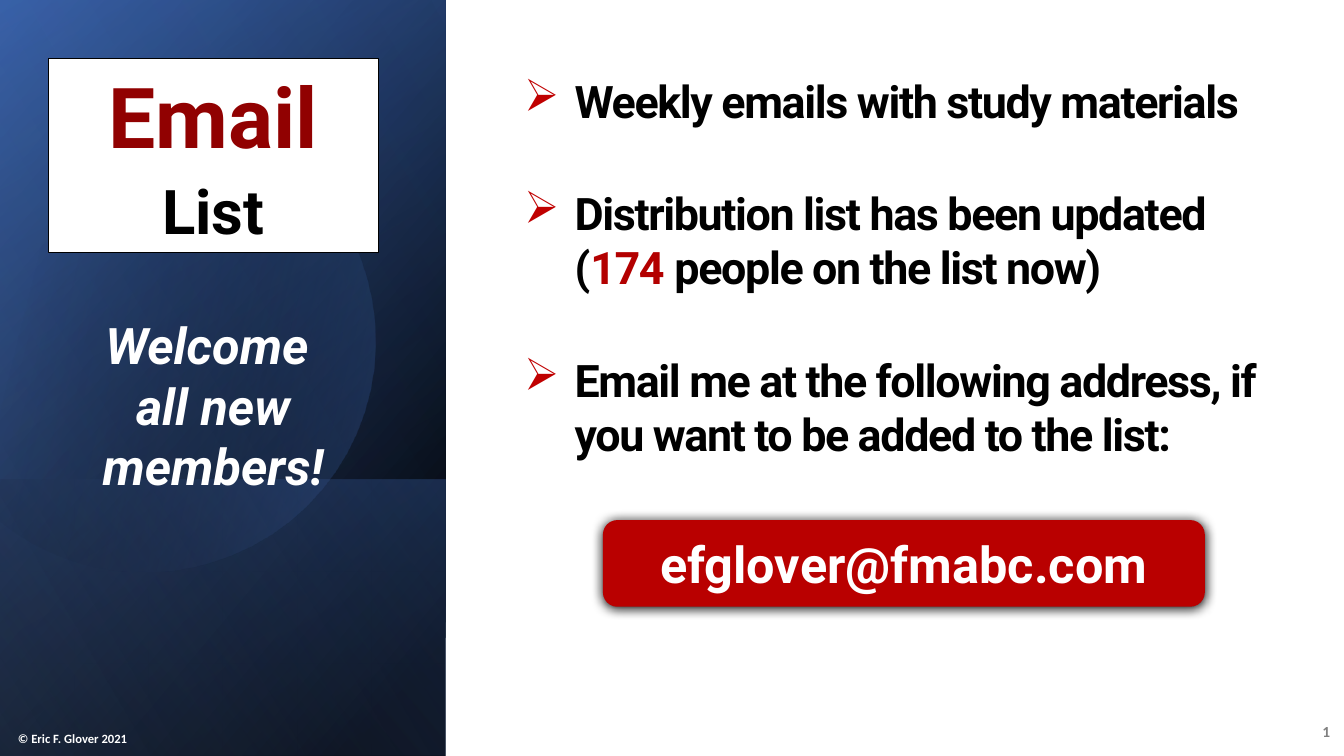
import math

import lxml.etree
import pptx
import pptx.dml.color
import pptx.enum.shapes
import pptx.enum.text
import pptx.oxml
import pptx.oxml.ns
import pptx.util

Inches = pptx.util.Inches
Pt = pptx.util.Pt
KIND = pptx.enum.shapes.MSO_SHAPE
ALIGN = pptx.enum.text.PP_ALIGN
ANCHOR = pptx.enum.text.MSO_ANCHOR
NS = pptx.oxml.ns.nsdecls("a")
qn = pptx.oxml.ns.qn


def tint(code):
    """Turn a hex string into a colour."""
    return pptx.dml.color.RGBColor.from_string(code)


def assign(item, form):
    """Set each attribute named in a dict of format values."""
    for name, value in form.items():
        setattr(item, name, value)


def place(item, box):
    """Move an item to a box given in inches."""
    assign(item, dict(zip(("left", "top", "width", "height"), map(Inches, box))))


def solid(shape, code):
    """Give a shape a plain fill, no outline and no shadow."""
    shape.shadow.inherit = False
    shape.fill.solid()
    shape.fill.fore_color.rgb = tint(code)
    shape.line.fill.background()


def blend(shape, stops, angle):
    """Fill a shape with a linear gradient of (place, colour, opacity) stops."""
    solid(shape, "FFFFFF")
    marks = "".join(
        f'<a:gs pos="{pos * 1000}"><a:srgbClr val="{code}">'
        f'<a:alpha val="{alpha * 1000}"/></a:srgbClr></a:gs>'
        for pos, code, alpha in stops)
    grad = pptx.oxml.parse_xml(
        f'<a:gradFill {NS} rotWithShape="1"><a:gsLst>{marks}</a:gsLst>'
        f'<a:lin ang="{angle * 60000}" scaled="0"/></a:gradFill>')
    props = shape._element.spPr
    props.replace(props.find(qn("a:solidFill")), grad)


def write(para, text, size, code, face="Roboto", **form):
    """Add a bold run to a paragraph."""
    run = para.add_run()
    run.text = text
    assign(run.font, {"name": face, "size": Pt(size), "bold": True, **form})
    run.font.color.rgb = tint(code)
    return run


def label(slide, box, **form):
    """Add a wrapping text box and return its text frame."""
    frame = slide.shapes.add_textbox(*map(Inches, box)).text_frame
    assign(frame, {"word_wrap": True, **form})
    return frame


def disc(slide, box, turn):
    """Draw the tilted, cut-off circle that glows on the panel."""
    left, top, width, height = box
    mid = left + width / 2, top + height / 2
    curves = [
        [(2.46, 1.12), (3.35, 1.77), (3.63, 2.75)],
        [(3.98, 3.97), (3.28, 5.23), (2.07, 5.58)],
        [(1.31, 5.8), (0.53, 5.61), (-0.03, 5.14)],
        [(-0.15, 5.03)], [(-0.15, 1.75)], [(0, 1.61)],
        [(0.23, 1.42), (0.5, 1.28), (0.8, 1.19)],
        [(1.03, 1.13), (1.26, 1.1), (1.49, 1.1)]]
    dots = [(1.49, 1.1)]
    for curve in curves:
        ctrl = [dots[-1], *curve]
        deg = len(curve)
        count = 16 if deg > 1 else 1
        for step in range(1, count + 1):
            t = step / count
            dots.append(tuple(
                sum(math.comb(deg, k) * t ** k * (1 - t) ** (deg - k) * dot[axis]
                    for k, dot in enumerate(ctrl)) for axis in (0, 1)))
    cos, sin = math.cos(math.radians(-turn)), math.sin(math.radians(-turn))
    spun = []
    for x, y in dots:
        dx, dy = x - mid[0], y - mid[1]
        spun.append((Inches(mid[0] + dx * cos - dy * sin),
                     Inches(mid[1] + dx * sin + dy * cos)))
    pen = slide.shapes.build_freeform(*spun[0])
    pen.add_line_segments(spun[1:], close=True)
    shape = pen.convert_to_shape()
    shape.rotation = turn
    blend(shape, [(29, "000000", 0), (100, "4472C4", 43)], 30)


def panel(slide, box):
    """Layer the blue gradients of the side panel."""
    left, top, width, height = box
    low = 2.74

    def layer(tall, stops, angle):
        """Add a quarter-turned gradient resting on the panel's foot."""
        x = left + (width - tall) / 2
        y = top + height - (tall + width) / 2
        shape = slide.shapes.add_shape(
            KIND.RECTANGLE, *map(Inches, (x, y, tall, width)))
        shape.rotation = 90
        shape._element.spPr.find(qn("a:xfrm")).set("flipH", "1")
        blend(shape, stops, angle)

    layer(height, [(8, "000000", 100), (100, "2F5597", 100)], 50)
    layer(height, [(0, "000000", 0), (99, "4472C4", 46)], 30)
    layer(low, [(2, "4472C4", 29), (100, "000000", 30)], 130)
    disc(slide, (left - 0.55, top + 1.06, 4.27, 4.57), 343.9)
    layer(height, [(0, "000000", 0), (99, "8FAADC", 11)], 120)


def points(slide, box):
    """List the news with arrow bullets."""
    frame = label(slide, box, margin_top=0)
    items = [
        [("Weekly emails with study materials", "000000")],
        [("Distribution list has been updated (", "000000"), ("174", "B30000"),
         (" people on the list now)", "000000")],
        [("Email me at the following address, if you want to be added to the list:",
          "000000")]]
    for k, item in enumerate(items):
        para = frame.add_paragraph() if k else frame.paragraphs[0]
        para.space_after = Pt(42)
        props = para._p.get_or_add_pPr()
        props.set("marL", str(Inches(0.5)))
        props.set("indent", str(Inches(-0.5)))
        for mark in ('<a:buClr {}><a:srgbClr val="C00000"/></a:buClr>',
                     '<a:buChar {} char="➢"/>'):
            props.append(pptx.oxml.parse_xml(mark.format(NS)))
        for text, code in item:
            run = write(para, text, 32, code)
            run._r.get_or_add_rPr().set("spc", "-100")


def heading(slide, box):
    """Shape the title as a white rounded card."""
    title = slide.shapes.title
    slide.shapes._spTree.append(title._element)
    place(title, box)
    title._element.spPr.find(qn("a:xfrm")).addnext(pptx.oxml.parse_xml(
        f'<a:prstGeom {NS} prst="roundRect"><a:avLst/></a:prstGeom>'))
    solid(title, "FFFFFF")
    title.line.color.rgb = tint("000000")
    title.line.width = Pt(0.75)
    frame = title.text_frame
    assign(frame, {"margin_top": 0, "margin_bottom": 0, "word_wrap": True,
                   "vertical_anchor": ANCHOR.MIDDLE,
                   "auto_size": pptx.enum.text.MSO_AUTO_SIZE.NONE})
    rows = [("Email", 60, "910101"), ("List", 44, "000000")]
    for k, row in enumerate(rows):
        para = frame.add_paragraph() if k else frame.paragraphs[0]
        assign(para, {"alignment": ALIGN.CENTER, "space_after": Pt(6)})
        write(para, *row)


def address(slide, box):
    """Show the mail address on a red button with a soft shadow."""
    shape = slide.shapes.add_shape(KIND.ROUNDED_RECTANGLE, *map(Inches, box))
    solid(shape, "B90000")
    shape._element.spPr.find(qn("a:effectLst")).append(pptx.oxml.parse_xml(
        f'<a:outerShdw {NS} blurRad="{Pt(8.5)}" dist="{Pt(1)}" dir="5400000" '
        'algn="t" rotWithShape="0"><a:srgbClr val="000000"/></a:outerShdw>'))
    shape.text_frame.vertical_anchor = ANCHOR.MIDDLE
    para = shape.text_frame.paragraphs[0]
    para.alignment = ALIGN.CENTER
    write(para, "efglover@fmabc.com", 36, "FFFFFF")


def welcome(slide, box):
    """Greet the new members."""
    para = label(slide, box).paragraphs[0]
    para.alignment = ALIGN.CENTER
    write(para, "Welcome ", 36, "FFFFFF", italic=True)
    para.add_line_break()
    write(para, "all new members!", 36, "FFFFFF", italic=True)


def footer(slide, box):
    """Put the page number and the copyright line at the foot."""
    left, top, width, height = box
    para = label(slide, (left + width - 0.53, top + height - 0.44, 0.49, 0.4),
                 vertical_anchor=ANCHOR.MIDDLE).paragraphs[0]
    assign(para, {"alignment": ALIGN.RIGHT, "space_after": Pt(6)})
    write(para, "1", 11, "808080", "Calibri")
    para = label(slide, (left + 0.08, top + height - 0.33, 1.57, 0.28),
                 vertical_anchor=ANCHOR.BOTTOM).paragraphs[0]
    write(para, "© Eric F. Glover 2021", 9, "FFFFFF", "Calibri")


def main():
    """Build the slide and save it."""
    deck = pptx.Presentation()
    page = (0, 0, 13.33, 7.5)
    assign(deck, {"slide_width": Inches(page[2]), "slide_height": Inches(page[3])})
    slide = deck.slides.add_slide(deck.slide_layouts[5])
    solid(slide.shapes.add_shape(KIND.RECTANGLE, *map(Inches, page)), "FFFFFF")
    panel(slide, (0, 0, 4.42, 7.5))
    points(slide, (5.1, 0.73, 7.74, 5.89))
    heading(slide, (0.48, 0.58, 3.27, 1.93))
    footer(slide, page)
    address(slide, (5.98, 5.16, 5.97, 0.86))
    welcome(slide, (0.58, 3.07, 3.07, 1.92))
    deck.save("out.pptx")


if __name__ == "__main__":
    main()
